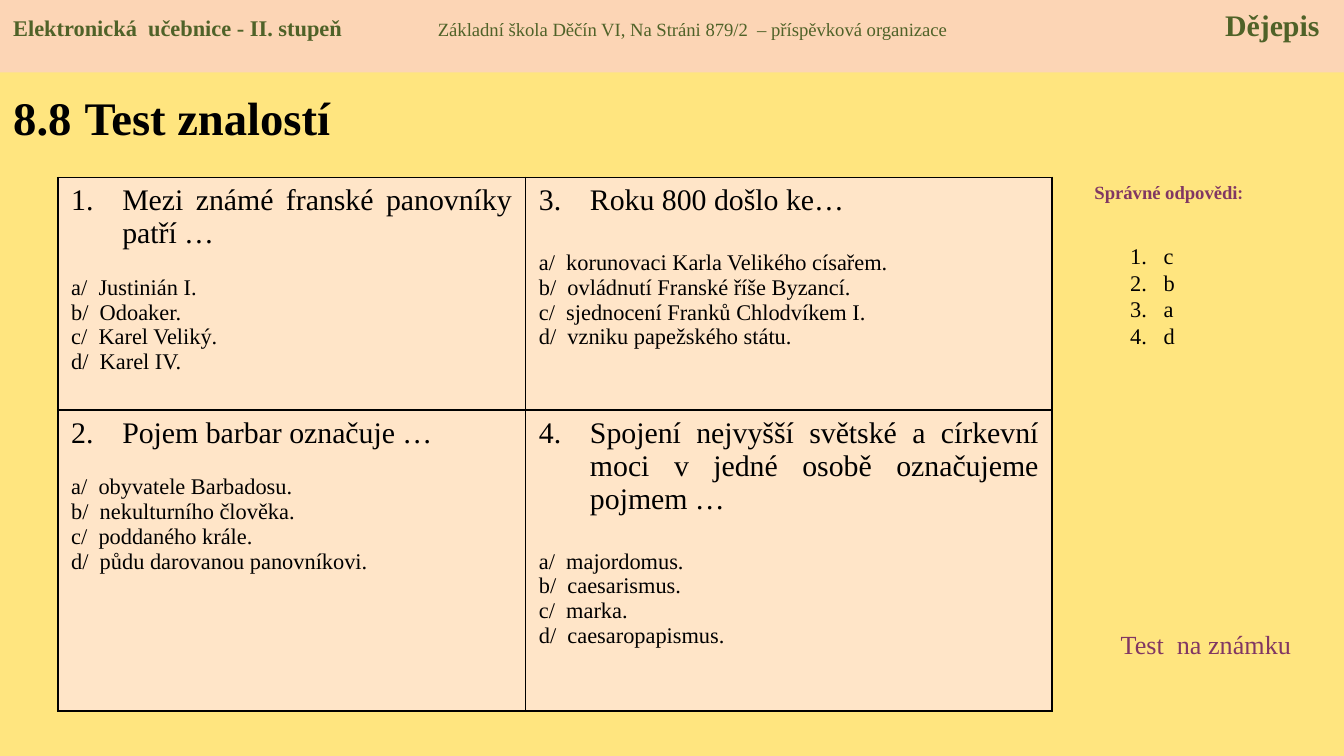
from dataclasses import dataclass

from lxml.etree import SubElement
from pptx import Presentation
from pptx.dml.color import RGBColor
from pptx.enum.shapes import MSO_SHAPE as Shape
from pptx.enum.text import MSO_ANCHOR as Anchor, PP_ALIGN as Align
from pptx.oxml import parse_xml
from pptx.oxml.ns import nsdecls, qn
from pptx.util import Inches, Pt


@dataclass(frozen=True)
class Theme:
    font: str = "Times New Roman"
    colon_font: str = "Calibri"
    background: str = "FFE57F"
    band: str = "FCD5B5"
    cell: str = "FFE5C8"
    text: str = "000000"
    header: str = "4F6228"
    accent: str = "813763"
    title: int = 25
    title_gap: int = 28
    question: int = 16
    note: int = 14
    body: int = 12
    small: int = 10
    border: int = 1


THEME = Theme()

QUESTIONS = [
    [
        (1, "Mezi známé franské panovníky patří …", 13.3,
         ["Justinián I.", "Odoaker.", "Karel Veliký.", "Karel IV."]),
        (3, "Roku 800 došlo ke…", 17.7,
         ["korunovaci Karla Velikého císařem.", "ovládnutí Franské říše Byzancí.",
          "sjednocení Franků Chlodvíkem I.", "vzniku papežského státu."]),
    ],
    [
        (2, "Pojem barbar označuje …", 13.3,
         ["obyvatele Barbadosu.", "nekulturního člověka.",
          "poddaného krále.", "půdu darovanou panovníkovi."]),
        (4, "Spojení nejvyšší světské a církevní moci v jedné osobě označujeme pojmem …", 17.7,
         ["majordomus.", "caesarismus.", "marka.", "caesaropapismus."]),
    ],
]


class SlideBuilder:
    def __init__(self, slide, theme):
        self.slide = slide
        self.theme = theme

    def background(self):
        fill = self.slide.background.fill
        fill.solid()
        fill.fore_color.rgb = RGBColor.from_string(self.theme.background)

    def run(self, paragraph, text, size, color, bold=False, font=None):
        run = paragraph.add_run()
        run.text = text
        run.font.name = font or self.theme.font
        run.font.size = Pt(size)
        run.font.bold = bold
        run.font.color.rgb = RGBColor.from_string(color)

    def number(self, paragraph, indent, start=1):
        properties = paragraph._p.get_or_add_pPr()
        properties.set("marL", str(Inches(indent)))
        properties.set("indent", str(-Inches(indent)))
        SubElement(properties, qn("a:buAutoNum"), type="arabicPeriod", startAt=str(start))

    def tabs(self, paragraph, stops):
        tab_list = SubElement(paragraph._p.get_or_add_pPr(), qn("a:tabLst"))
        for position, alignment in stops:
            SubElement(tab_list, qn("a:tab"), pos=str(Inches(position)), algn=alignment)

    def text_box(self, left, top, width, height, anchor=Anchor.TOP):
        box = self.slide.shapes.add_textbox(
            Inches(left), Inches(top), Inches(width), Inches(height))
        frame = box.text_frame
        frame.word_wrap = True
        frame.vertical_anchor = anchor
        return frame

    def band(self, left, top, width, height):
        shape = self.slide.shapes.add_shape(
            Shape.RECTANGLE, Inches(left), Inches(top), Inches(width), Inches(height))
        shape.shadow.inherit = False
        shape.fill.solid()
        shape.fill.fore_color.rgb = RGBColor.from_string(self.theme.band)
        shape.line.fill.background()
        frame = shape.text_frame
        frame.word_wrap = True
        frame.vertical_anchor = Anchor.TOP
        frame.paragraphs[0].alignment = Align.LEFT
        return frame

    def borders(self, cell):
        properties = cell._tc.get_or_add_tcPr()
        for index, side in enumerate(("lnL", "lnR", "lnT", "lnB")):
            properties.insert(index, parse_xml(
                f'<a:{side} {nsdecls("a")} w="{Pt(self.theme.border)}"><a:solidFill>'
                f'<a:srgbClr val="{self.theme.text}"/></a:solidFill></a:{side}>'))

    def question(self, cell, number, question, gap, options):
        theme = self.theme
        cell.fill.solid()
        cell.fill.fore_color.rgb = RGBColor.from_string(theme.cell)
        self.borders(cell)
        frame = cell.text_frame
        paragraph = frame.paragraphs[0]
        paragraph.alignment = Align.JUSTIFY
        self.number(paragraph, 0.38, number)
        self.run(paragraph, question, theme.question, theme.text)
        for index, (letter, option) in enumerate(zip("abcd", options)):
            paragraph = frame.add_paragraph()
            paragraph.alignment = Align.JUSTIFY
            if index == 0:
                paragraph.space_before = Pt(gap)
            self.run(paragraph, f"{letter}/  {option}", theme.body, theme.text)

    def question_table(self, left, top, widths, heights, questions):
        table = self.slide.shapes.add_table(
            len(heights), len(widths), Inches(left), Inches(top),
            Inches(sum(widths)), Inches(sum(heights))).table
        table.first_row = False
        table.horz_banding = False
        for column, width in zip(table.columns, widths):
            column.width = Inches(width)
        for row, height, row_questions in zip(table.rows, heights, questions):
            row.height = Inches(height)
            for cell, question in zip(row.cells, row_questions):
                self.question(cell, *question)

    def answer_list(self, frame, answers):
        for index, answer in enumerate(answers):
            paragraph = frame.add_paragraph() if index else frame.paragraphs[0]
            self.number(paragraph, 0.25)
            self.run(paragraph, answer, self.theme.body, self.theme.text)


def main():
    presentation = Presentation()
    presentation.slide_width = Inches(10)
    presentation.slide_height = Inches(10 * 9 / 16)
    slide = presentation.slides.add_slide(presentation.slide_layouts[6])
    builder = SlideBuilder(slide, THEME)
    builder.background()

    title = builder.text_box(0, 0.53, 3.19, 0.65, Anchor.MIDDLE).paragraphs[0]
    builder.run(title, "8.8", THEME.title, THEME.text, bold=True)
    builder.run(title, " ", THEME.title_gap, THEME.text, bold=True)
    builder.run(title, "Test znalostí", THEME.title, THEME.text, bold=True)

    heading = builder.text_box(7.91, 1.3, 1.57, 0.27).paragraphs[0]
    heading.alignment = Align.CENTER
    builder.run(heading, "Správné odpovědi", THEME.small, THEME.accent, bold=True)
    builder.run(heading, ":", THEME.small, THEME.accent, bold=True, font=THEME.colon_font)

    builder.question_table(0.43, 1.32, (3.48, 3.92), (1.73, 2.24), QUESTIONS)
    builder.answer_list(builder.text_box(8.31, 1.75, 0.55, 1.11), "cbad")

    note = builder.text_box(8.24, 4.63, 1.57, 0.34).paragraphs[0]
    builder.run(note, "Test  na známku", THEME.note, THEME.accent)

    header = builder.band(0, 0, 10, 0.54).paragraphs[0]
    builder.tabs(header, [(3.16, "l"), (9.72, "r")])
    builder.run(header, "Elektronická  učebnice - II. stupeň\t", THEME.body, THEME.header, bold=True)
    builder.run(header, "Základní škola Děčín VI, Na Stráni 879/2  – příspěvková organizace\t",
                THEME.small, THEME.header)
    builder.run(header, "Dějepis", THEME.question, THEME.header, bold=True)

    presentation.save("out.pptx")


if __name__ == "__main__":
    main()
